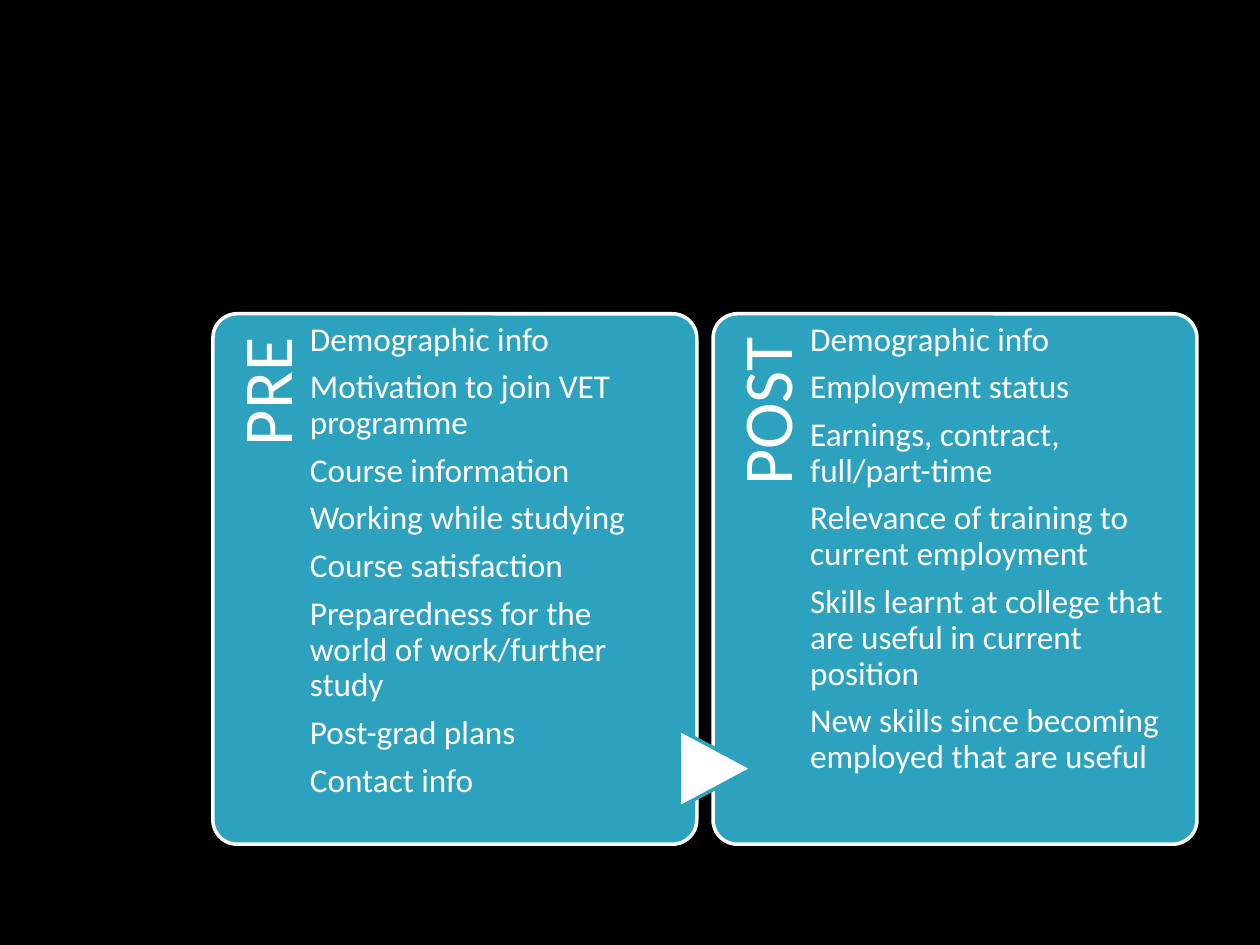
from pptx import Presentation
from pptx.dml.color import RGBColor
from pptx.enum.shapes import MSO_SHAPE as Shape
from pptx.enum.text import MSO_ANCHOR as Anchor, MSO_AUTO_SIZE as AutoSize, PP_ALIGN as Align
from pptx.oxml.xmlchemy import OxmlElement
from pptx.util import Inches, Pt

TEAL, WHITE, BLACK = "2DA2BF", "FFFFFF", "000000"
CARD_LEFT, CARD_TOP, CARD_WIDTH, CARD_HEIGHT = 1.69, 2.49, 3.84, 4.21
CARD_STEP = 3.97
LABEL_WIDTH, LABEL_LENGTH = 0.77, 3.45
LIST_WIDTH = 2.86

SURVEYS = [
    ("PRE", ["Demographic info", "Motivation to join VET programme",
             "Course information", "Working while studying",
             "Course satisfaction",
             "Preparedness for the world of work/further study",
             "Post-grad plans", "Contact info"]),
    ("POST", ["Demographic info", "Employment status",
              "Earnings, contract, full/part-time",
              "Relevance of training to current employment",
              "Skills learnt at college that are useful in current position",
              "New skills since becoming employed that are useful"]),
]


def set_all(target, formats):
    for name, value in formats.items():
        setattr(target, name, value)


def paint(fill, color):
    fill.solid()
    fill.fore_color.rgb = RGBColor.from_string(color)


def place(part, left, top, width, height):
    set_all(part, {"left": Inches(left), "top": Inches(top),
                   "width": Inches(width), "height": Inches(height)})


def add_outlined(slide, kind, box, fill, outline):
    part = slide.shapes.add_shape(kind, *map(Inches, box))
    part.shadow.inherit = False
    paint(part.fill, fill)
    paint(part.line.fill, outline)
    part.line.width = Pt(2)
    return part


def write(frame, lines, size, align, top_inset, right_inset=0):
    set_all(frame, {"word_wrap": True, "auto_size": AutoSize.NONE,
                    "vertical_anchor": Anchor.TOP,
                    "margin_left": 0, "margin_top": Inches(top_inset),
                    "margin_right": Inches(right_inset), "margin_bottom": 0})
    frame.text = "\n".join(lines)
    for paragraph in frame.paragraphs:
        set_all(paragraph, {"alignment": align, "line_spacing": 0.9,
                            "space_before": Pt(0),
                            "space_after": Pt(round(size * 0.35, 2))})
        set_all(paragraph.runs[0].font, {"name": "Calibri", "size": Pt(size)})
        paint(paragraph.runs[0].font.fill, WHITE)


def remove_bullets(frame):
    for paragraph in frame.paragraphs:
        properties = paragraph._p.get_or_add_pPr()
        properties.set("marL", "0")
        properties.set("indent", "0")
        properties.append(OxmlElement("a:buNone"))


def add_survey_card(slide, topics, label, items, left, top, width, height):
    # Card
    card = add_outlined(slide, Shape.ROUNDED_RECTANGLE,
                        (left, top, width, height), TEAL, WHITE)
    card.adjustments[0] = 0.05

    # Sideways label, turned about its centre into the card's left strip
    turn_shift = (LABEL_LENGTH - LABEL_WIDTH) / 2
    heading = slide.shapes.add_textbox(
        Inches(left - turn_shift), Inches(top + turn_shift),
        Inches(LABEL_LENGTH), Inches(LABEL_WIDTH))
    heading.rotation = 270
    write(heading.text_frame, [label], 40, Align.RIGHT, 0.15, 0.19)

    # Topic list, brought in front of the card
    place(topics, left + LABEL_WIDTH, top, LIST_WIDTH, height)
    write(topics.text_frame, items, 19, Align.LEFT, 0.07)
    remove_bullets(topics.text_frame)
    slide.shapes._spTree.append(topics.element)


def add_step_arrow(slide, left, top, width, height):
    arrow = add_outlined(slide, Shape.FLOWCHART_EXTRACT,
                         (left, top, width, height), WHITE, TEAL)
    arrow.rotation = 90


def main():
    deck = Presentation()
    set_all(deck, {"slide_width": Inches(10), "slide_height": Inches(7.5)})
    slide = deck.slides.add_slide(deck.slide_layouts.get_by_name("Two Content"))
    paint(slide.background.fill, BLACK)

    # The slide has two lists and no title
    title, *topic_lists = list(slide.placeholders)[:3]
    slide.shapes._spTree.remove(title.element)

    for column, (topics, (label, items)) in enumerate(zip(topic_lists, SURVEYS)):
        add_survey_card(slide, topics, label, items,
                        CARD_LEFT + column * CARD_STEP, CARD_TOP,
                        CARD_WIDTH, CARD_HEIGHT)
    add_step_arrow(slide, 5.37, 5.81, 0.62, 0.58)
    deck.save("out.pptx")


if __name__ == "__main__":
    main()
